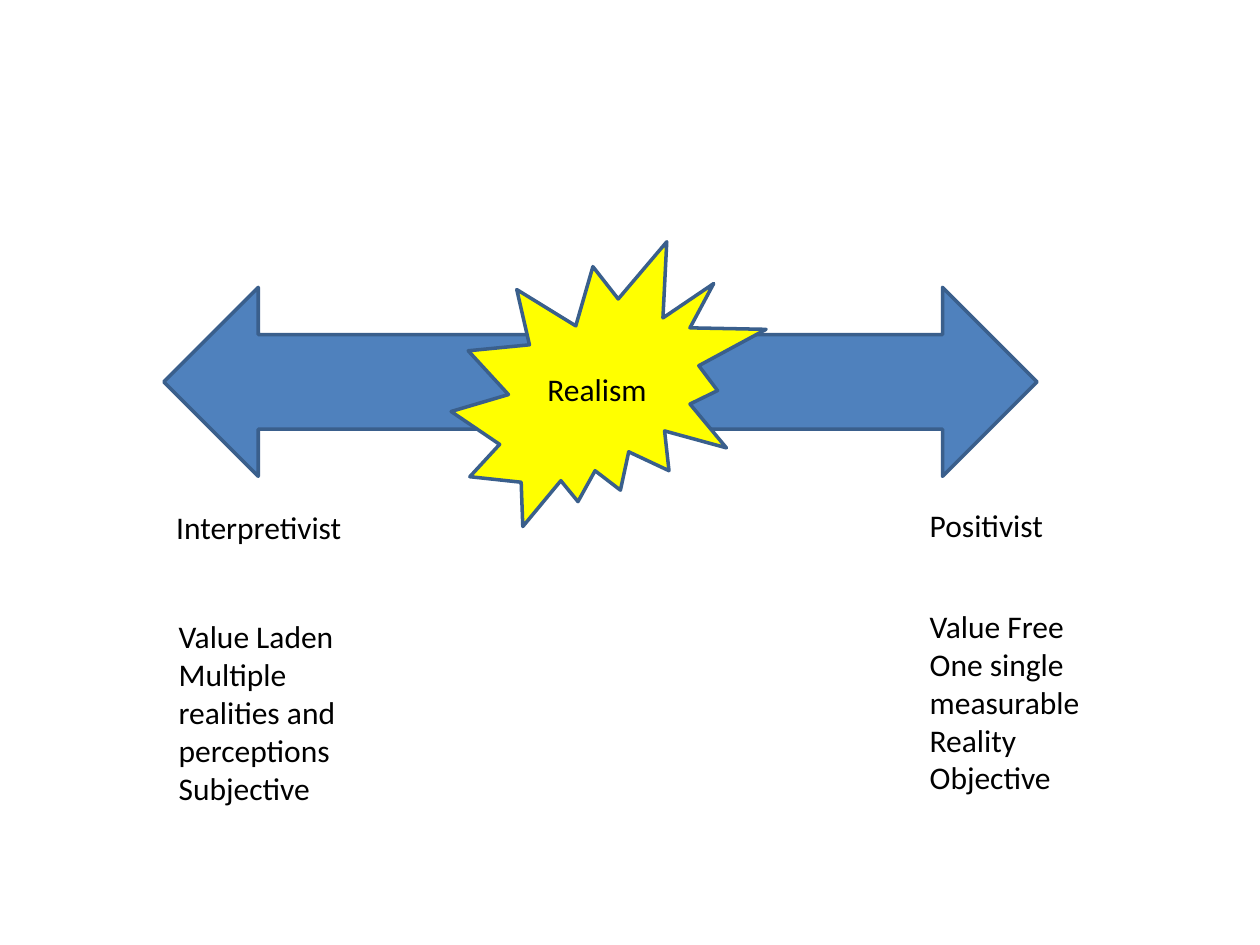
import pptx
import pptx.util
import pptx.dml.color
import pptx.enum.shapes
import pptx.enum.text

Pt = pptx.util.Pt
RGB = pptx.dml.color.RGBColor
KIND = pptx.enum.shapes.MSO_SHAPE
ALIGN = pptx.enum.text.PP_ALIGN
ANCHOR = pptx.enum.text.MSO_ANCHOR

BLUE = RGB(0x4F, 0x81, 0xBD)
EDGE = RGB(0x3A, 0x5F, 0x8C)
YELLOW = RGB(0xFF, 0xFF, 0x00)
BLACK = RGB(0x00, 0x00, 0x00)

ARROW = (93.6, 164.2, 499, 108)
BURST = (257.8, 138.2, 180, 162.7)
LABELS = [
    ((93.6, 286.6, 113.8, 28.8), ["Interpretivist"], False),
    ((524.2, 285.8, 96.5, 28.8), ["Positivist"], True),
    ((95, 349.2, 118.8, 116.6),
     ["Value Laden", "Multiple realities and perceptions", "Subjective"], True),
    ((524.2, 343.4, 124.6, 116.6),
     ["Value Free", "One single measurable Reality", "Objective"], True),
]


def write(frame, lines, align=ALIGN.LEFT, anchor=ANCHOR.TOP, wrap=True):
    frame.word_wrap = wrap
    frame.vertical_anchor = anchor
    for i, line in enumerate(lines):
        para = frame.paragraphs[0] if i == 0 else frame.add_paragraph()
        para.alignment = align
        run = para.add_run()
        run.text = line
        run.font.name = "Calibri"
        run.font.size = Pt(18)
        run.font.color.rgb = BLACK


def draw(slide, kind, box, fill):
    shape = slide.shapes.add_shape(kind, *map(Pt, box))
    shape.shadow.inherit = False
    shape.fill.solid()
    shape.fill.fore_color.rgb = fill
    shape.line.color.rgb = EDGE
    shape.line.width = Pt(2)
    return shape


def main():
    deck = pptx.Presentation()
    deck.slide_width, deck.slide_height = Pt(720), Pt(540)
    slide = deck.slides.add_slide(deck.slide_layouts[6])
    draw(slide, KIND.LEFT_RIGHT_ARROW, ARROW, BLUE)
    burst = draw(slide, KIND.EXPLOSION2, BURST, YELLOW)
    write(burst.text_frame, ["Realism"], align=ALIGN.CENTER, anchor=ANCHOR.MIDDLE)
    for box, lines, wrap in LABELS:
        label = slide.shapes.add_textbox(*map(Pt, box))
        write(label.text_frame, lines, wrap=wrap)
    deck.save("out.pptx")


if __name__ == "__main__":
    main()
